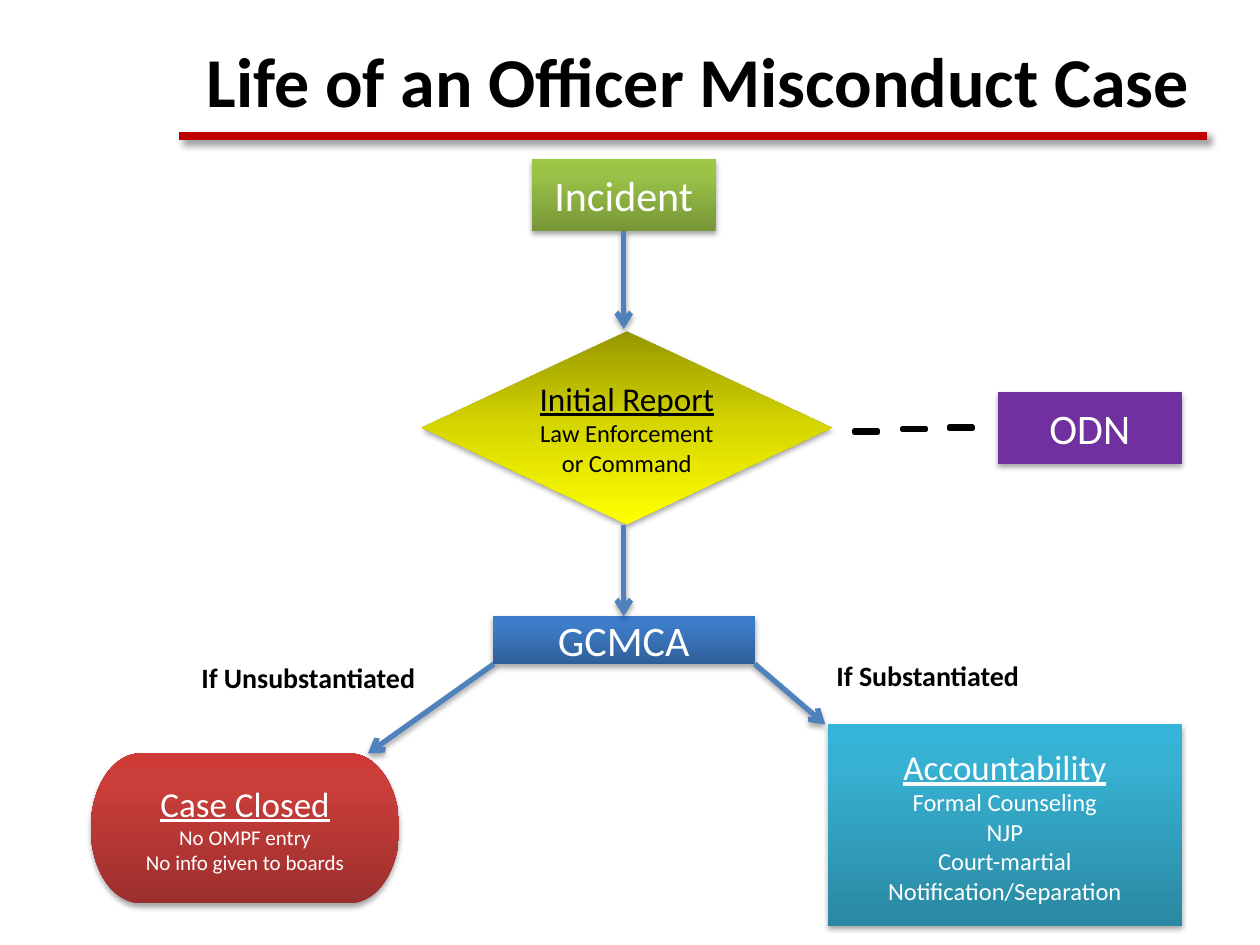
from copy import deepcopy

from lxml import etree
from pptx import Presentation
from pptx.dml.color import RGBColor
from pptx.enum.shapes import MSO_CONNECTOR, MSO_SHAPE
from pptx.enum.text import MSO_ANCHOR, PP_ALIGN
from pptx.oxml.ns import qn
from pptx.util import Inches, Pt

PROCESS = MSO_SHAPE.FLOWCHART_PROCESS
DECISION = MSO_SHAPE.FLOWCHART_DECISION
TERMINATOR = MSO_SHAPE.FLOWCHART_TERMINATOR
MINUS = MSO_SHAPE.MATH_MINUS
STRAIGHT = MSO_CONNECTOR.STRAIGHT
MIDDLE, TOP = MSO_ANCHOR.MIDDLE, MSO_ANCHOR.TOP
CENTER, LEFT = PP_ALIGN.CENTER, PP_ALIGN.LEFT
BOTTOM_SIDE, TOP_SIDE = 2, 0

FONT = "Calibri"
COLORS = {"black": "000000", "white": "FFFFFF", "rule": "C00000", "arrow": "4F81BD"}
SHADE = (0, 0.8, 1)
FILLS = {
    "green": (270, SHADE, ("779737", "9BC348", "9DC746")),
    "yellow": (90, (0, 0.5, 1), ("979700", "D7D700", "FFFF00")),
    "red": (270, SHADE, ("9C2F2D", "CB3E3A", "CE3B37")),
    "blue": (270, SHADE, ("2F5F99", "3D7CC7", "3A7CCB")),
    "teal": (270, SHADE, ("2A88A2", "37B1D2", "34B4D6")),
    "purple": "7030A0",
}
RULE_SHADOW = (40, 4, 3, 45)
STEP_SHADOW = (35, 3.15, 1.8, 90)

TITLE = "Life of an Officer Misconduct Case"
# name: shape, box, fill, text colour, heading, heading size, details, detail size
STEPS = {
    "incident": (PROCESS, (4.22, 1.26, 1.46, 0.57), "green", "white", "Incident", 24, [], 0),
    "report": (DECISION, (3.35, 2.63, 3.25, 1.53), "yellow", "black",
               "Initial Report", 19, ["Law Enforcement or Command"], 14),
    "closed": (TERMINATOR, (0.72, 5.98, 2.45, 1.19), "red", "white",
               "Case Closed", 20, ["No OMPF entry", "No info given to boards"], 12),
    "gcmca": (PROCESS, (3.91, 4.89, 2.08, 0.38), "blue", "white", "GCMCA", 24, [], 0),
    "accountability": (PROCESS, (6.57, 5.75, 2.81, 1.6), "teal", "white", "Accountability", 20,
                       ["Formal Counseling", "NJP", "Court-martial",
                        "Notification/Separation"], 14),
    "odn": (PROCESS, (7.92, 3.11, 1.46, 0.57), "purple", "white", "ODN", 24, [], 0),
}
OUTCOMES = [
    ("If Unsubstantiated", (1.5, 5.19, 2.01, 0.43)),
    ("If Substantiated", (6.54, 5.18, 1.75, 0.43)),
]
# start, end, step joined at the start, step joined at the end
ARROWS = [
    ((3.92, 5.27), (2.92, 5.98), None, None),
    ((4.95, 1.83), (4.95, 2.61), "incident", None),
    ((4.95, 4.17), (4.95, 4.89), None, "gcmca"),
    ((5.99, 5.27), (6.55, 5.75), None, None),
]
DASHES = [(6.75, 3.4), (7.13, 3.38), (7.5, 3.37)]
DASH_SIZE = (0.25, 0.05)


def rgb(name):
    return RGBColor.from_string(COLORS.get(name, name))


def inches(values):
    return [Inches(value) for value in values]


def add_shadow(part, shadow):
    alpha, blur, distance, angle = shadow
    effects = etree.SubElement(part._element.spPr, qn("a:effectLst"))
    outer = etree.SubElement(effects, qn("a:outerShdw"), blurRad=str(Pt(blur)),
                             dist=str(Pt(distance)), dir=str(angle * 60000), rotWithShape="0")
    color = etree.SubElement(outer, qn("a:srgbClr"), val=COLORS["black"])
    etree.SubElement(color, qn("a:alpha"), val=str(alpha * 1000))


def paint(fill, paint_spec):
    if isinstance(paint_spec, str):
        fill.solid()
        fill.fore_color.rgb = rgb(paint_spec)
        return
    angle, positions, colors = paint_spec
    fill.gradient()
    fill.gradient_angle = 360 - angle
    last_stop = fill.gradient_stops[-1]._gs
    last_stop.addnext(deepcopy(last_stop))
    for stop, position, color in zip(fill.gradient_stops, positions, colors):
        stop.position = position
        stop.color.rgb = rgb(color)


def write(frame, lines, color, align, anchor):
    frame.vertical_anchor = anchor
    for index, (text, size, bold, underline) in enumerate(lines):
        paragraph = frame.add_paragraph() if index else frame.paragraphs[0]
        paragraph.text = text
        paragraph.alignment = align
        font = paragraph.font
        font.name, font.size, font.bold, font.underline = FONT, Pt(size), bold, underline
        font.color.rgb = rgb(color)


def add_line(slide, start, end, color, width, shadow):
    line = slide.shapes.add_connector(STRAIGHT, *inches(start + end))
    line.line.color.rgb = rgb(color)
    line.line.width = Pt(width)
    add_shadow(line, shadow)
    return line


def add_step(slide, kind, box, fill, color, heading, heading_size, details, detail_size):
    step = slide.shapes.add_shape(kind, *inches(box))
    paint(step.fill, FILLS[fill])
    step.line.fill.background()
    add_shadow(step, STEP_SHADOW)
    lines = [(heading, heading_size, False, bool(details))]
    lines += [(detail, detail_size, False, False) for detail in details]
    write(step.text_frame, lines, color, CENTER, MIDDLE)
    return step


def main():
    """Build the officer misconduct case flowchart."""
    deck = Presentation()
    deck.slide_width, deck.slide_height = Inches(10), Inches(7.5)
    slide = deck.slides.add_slide(deck.slide_layouts[5])

    title = slide.shapes.title
    title.left, title.top, title.width, title.height = inches((1.5, 0.25, 8.08, 0.77))
    write(title.text_frame, [(TITLE, 40, True, False)], "black", CENTER, TOP)
    add_line(slide, (1.42, 1.08), (9.58, 1.08), "rule", 5, RULE_SHADOW)

    steps = {name: add_step(slide, *step) for name, step in STEPS.items()}

    for text, box in OUTCOMES:
        outcome = slide.shapes.add_textbox(*inches(box))
        outcome.text_frame.word_wrap = False
        write(outcome.text_frame, [(text, 16, True, False)], "black", LEFT, TOP)

    for start, end, source, target in ARROWS:
        arrow = add_line(slide, start, end, "arrow", 3, STEP_SHADOW)
        etree.SubElement(arrow.line._get_or_add_ln(), qn("a:tailEnd"), type="arrow")
        if source:
            arrow.begin_connect(steps[source], BOTTOM_SIDE)
        if target:
            arrow.end_connect(steps[target], TOP_SIDE)

    for corner in DASHES:
        dash = slide.shapes.add_shape(MINUS, *inches(corner + DASH_SIZE))
        dash.fill.background()
        dash.line.color.rgb = rgb("black")
        dash.line.width = Pt(3)
        dash.shadow.inherit = False

    deck.save("out.pptx")


if __name__ == "__main__":
    main()
